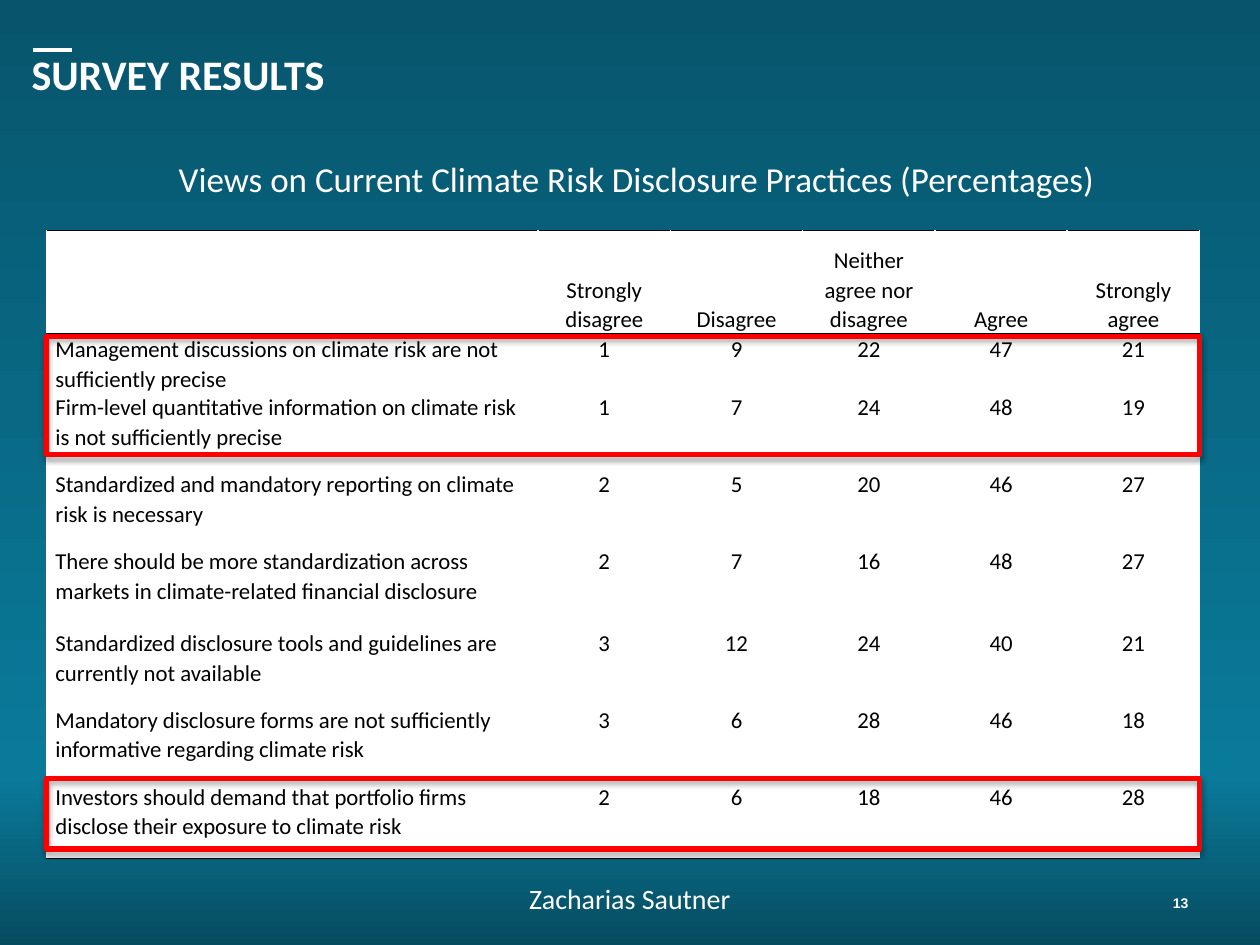
"""Build the survey results slide on climate risk disclosure."""
from lxml import etree
from pptx import Presentation
from pptx.dml.color import RGBColor
from pptx.enum.shapes import MSO_CONNECTOR, MSO_SHAPE
from pptx.enum.text import MSO_ANCHOR, PP_ALIGN
from pptx.oxml import parse_xml
from pptx.oxml.ns import nsdecls, qn
from pptx.util import Inches, Pt

LEFT, CENTER = PP_ALIGN.LEFT, PP_ALIGN.CENTER
TOP, MIDDLE, BOTTOM = MSO_ANCHOR.TOP, MSO_ANCHOR.MIDDLE, MSO_ANCHOR.BOTTOM
STRAIGHT, RECTANGLE = MSO_CONNECTOR.STRAIGHT, MSO_SHAPE.RECTANGLE

COLORS = {
    "white": "FFFFFF",
    "black": "000000",
    "highlight": "FF0000",
    "bottom": "064C60",
    "glow": "0A7A9A",
    "top": "07556C",
}
TABLE_LEFT, TABLE_TOP, TABLE_WIDTH = 0.37, 1.83, 9.15
COLUMN_WIDTHS = [3.9] + [1.05] * 5
ROW_HEIGHTS = [0.82, 0.44, 0.61, 0.61, 0.65, 0.61, 0.61, 0.61]
ROWS = [
    ("", "Strongly disagree", "Disagree", "Neither agree nor disagree", "Agree", "Strongly agree"),
    ("Management discussions on climate risk are not sufficiently precise", 1, 9, 22, 47, 21),
    ("Firm-level quantitative information on climate risk is not sufficiently precise",
     1, 7, 24, 48, 19),
    ("Standardized and mandatory reporting on climate risk is necessary", 2, 5, 20, 46, 27),
    ("There should be more standardization across markets in climate-related "
     "financial disclosure", 2, 7, 16, 48, 27),
    ("Standardized disclosure tools and guidelines are currently not available",
     3, 12, 24, 40, 21),
    ("Mandatory disclosure forms are not sufficiently informative regarding climate risk",
     3, 6, 28, 46, 18),
    ("Investors should demand that portfolio firms disclose their exposure to climate risk",
     2, 6, 18, 46, 28),
]


def rgb(name):
    return RGBColor.from_string(COLORS[name])


def write_text(frame, text, size, font="Calibri", color="white", bold=False,
               align=LEFT, spacing=None):
    para = frame.paragraphs[0]
    para.alignment = align
    para.line_spacing = spacing
    para.font.size = Pt(size)
    span = para.add_run()
    span.text = text
    span.font.name = font
    span.font.size = Pt(size)
    span.font.bold = bold
    span.font.color.rgb = rgb(color)


def paint_background(page):
    stops = "".join(
        f'<a:gs pos="{position * 1000}"><a:srgbClr val="{COLORS[name]}"/></a:gs>'
        for position, name in ((0, "bottom"), (18, "glow"), (100, "top")))
    fill = page.background.fill
    fill.gradient()
    gradient = page.element.find(".//" + qn("a:gradFill"))
    gradient.getparent().replace(gradient, parse_xml(
        f'<a:gradFill {nsdecls("a")} rotWithShape="1"><a:gsLst>{stops}</a:gsLst>'
        '<a:lin ang="16200000" scaled="0"/></a:gradFill>'))


def set_title(page, text):
    title = page.shapes.title
    title.left, title.top = Inches(0.15), Inches(0.16)
    title.width, title.height = Inches(7.5), Inches(0.85)
    title.text_frame.vertical_anchor = MIDDLE
    write_text(title.text_frame, text, 24, bold=True)


def add_label(page, text, left, top, width, height, **style):
    box = page.shapes.add_textbox(Inches(left), Inches(top), Inches(width), Inches(height))
    box.text_frame.word_wrap = True
    write_text(box.text_frame, text, **style)


def add_accent_line(page):
    line = page.shapes.add_connector(
        STRAIGHT, Inches(0.26), Inches(0.4), Inches(0.57), Inches(0.4))
    line.line.color.rgb = rgb("white")
    line.line.width = Pt(2.25)
    etree.SubElement(line.element.spPr, qn("a:effectLst"))


def add_borders(cell, **sides):
    properties = cell._tc.get_or_add_tcPr()
    for side, color in sides.items():
        properties.append(parse_xml(
            f'<a:ln{side} {nsdecls("a")} w="{Pt(1)}"><a:solidFill>'
            f'<a:srgbClr val="{COLORS[color]}"/></a:solidFill></a:ln{side}>'))


def format_cell(cell, text, row, column):
    header, last = row == 0, row == len(ROWS) - 1
    cell.margin_left = cell.margin_right = Inches(0.07)
    cell.margin_top = cell.margin_bottom = 0
    cell.vertical_anchor = BOTTOM if header else TOP
    write_text(cell.text_frame, str(text), 13, color="black",
               align=CENTER if column else LEFT, spacing=1.07)
    add_borders(cell, L="white", R="white",
                T="black" if row < 2 else "white",
                B="black" if header or last else "white")
    cell.fill.solid()
    cell.fill.fore_color.rgb = rgb("white")


def add_survey_table(page):
    table = page.shapes.add_table(
        len(ROWS), len(COLUMN_WIDTHS), Inches(TABLE_LEFT), Inches(TABLE_TOP),
        Inches(TABLE_WIDTH), Inches(sum(ROW_HEIGHTS))).table
    table.first_row = table.horz_banding = False
    for column, width in zip(table.columns, COLUMN_WIDTHS):
        column.width = Inches(width)
    for row, height in zip(table.rows, ROW_HEIGHTS):
        row.height = Inches(height)
    for row, values in enumerate(ROWS):
        for column, value in enumerate(values):
            format_cell(table.cell(row, column), value, row, column)


def add_highlight(page, top, height):
    frame = page.shapes.add_shape(
        RECTANGLE, Inches(TABLE_LEFT), Inches(top), Inches(TABLE_WIDTH), Inches(height))
    frame.fill.background()
    frame.line.color.rgb = rgb("highlight")
    frame.line.width = Pt(3)
    frame.shadow.inherit = False
    frame.element.spPr.find(qn("a:effectLst")).append(parse_xml(
        f'<a:outerShdw {nsdecls("a")} blurRad="{Pt(3.1)}" dist="{Pt(1.8)}" dir="5400000" '
        f'rotWithShape="0"><a:srgbClr val="{COLORS["black"]}"><a:alpha val="35000"/>'
        '</a:srgbClr></a:outerShdw>'))


def main():
    deck = Presentation()
    deck.slide_width, deck.slide_height = Inches(10), Inches(7.5)
    page = deck.slides.add_slide(deck.slide_layouts[5])
    paint_background(page)
    add_label(page, "13", 9.21, 7.05, 0.79, 0.24, size=8, font="Arial", bold=True)
    add_accent_line(page)
    add_label(page, "Zacharias Sautner", 4.1, 6.95, 1.82, 0.37, size=16)
    set_title(page, "SURVEY RESULTS")
    add_survey_table(page)
    add_label(page, "Views on Current Climate Risk Disclosure Practices (Percentages)",
              1.32, 1.2, 7.82, 0.44, size=20)
    for top, height in ((2.67, 0.94), (6.18, 0.56)):
        add_highlight(page, top, height)
    deck.save("out.pptx")


if __name__ == "__main__":
    main()
